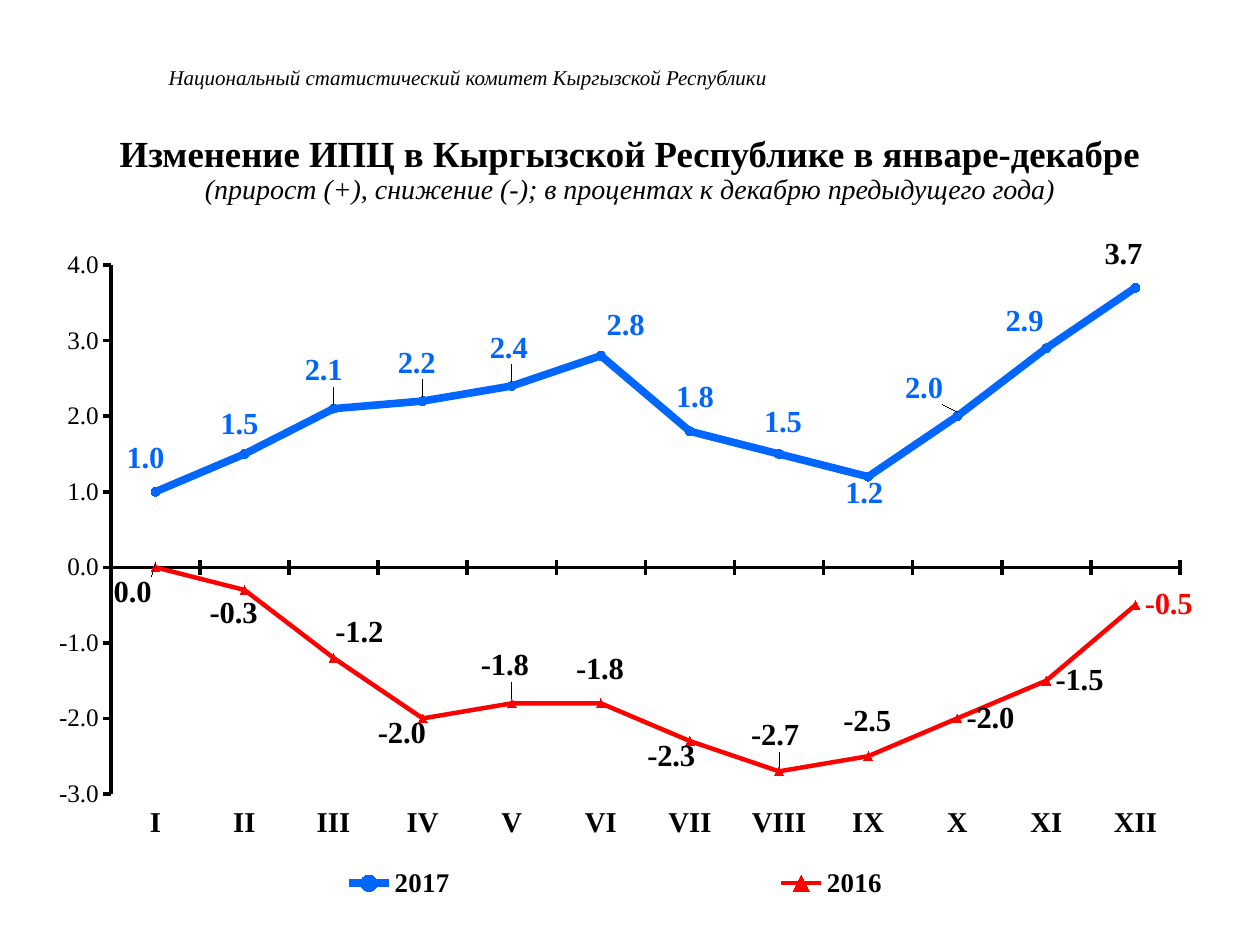
from lxml import etree
from pptx import Presentation
from pptx.chart.data import CategoryChartData
from pptx.dml.color import RGBColor
from pptx.enum.chart import (XL_CHART_TYPE, XL_LABEL_POSITION, XL_LEGEND_POSITION,
                             XL_MARKER_STYLE, XL_TICK_LABEL_POSITION, XL_TICK_MARK)
from pptx.enum.text import MSO_ANCHOR, MSO_AUTO_SIZE, PP_ALIGN
from pptx.oxml.ns import qn
from pptx.util import Cm, Pt

FONT = "Times New Roman"
COLORS = {"text": "000000", "2017": "0066FF", "2016": "FF0000"}
MONTHS = ["I", "II", "III", "IV", "V", "VI", "VII", "VIII", "IX", "X", "XI", "XII"]
NUMBER_FORMAT = "0.0"

# Label shifts are centimetres right and down from the place above the point;
# None puts the label to the right of its point.
SERIES = [
    {"name": "2017", "width": 4.37, "marker": XL_MARKER_STYLE.CIRCLE,
     "values": [1, 1.5, 2.1, 2.2, 2.4, 2.8, 1.8, 1.5, 1.2, 2, 2.9, 3.7],
     "label": "2017", "last_label": "text",
     "shifts": [(-0.2, -0.14), (-0.1, -0.08), (-0.2, -0.24), (-0.12, -0.24),
                (-0.06, -0.24), (0.5, -0.08), (0.1, -0.16), (0.08, -0.12),
                (-0.08, 0.87), (-0.67, -0.04), (-0.44, -0.02), (-0.24, -0.14)]},
    {"name": "2016", "width": 2.56, "marker": XL_MARKER_STYLE.TRIANGLE,
     "values": [0, -0.3, -1.2, -2, -1.8, -1.8, -2.3, -2.7, -2.5, -2, -1.5, -0.5],
     "label": "text", "last_label": "2016",
     "shifts": [(-0.46, 1.03), (-0.22, 0.99), (0.52, 0), (-0.42, 0.83),
                (-0.14, -0.24), (-0.02, -0.16), (-0.38, 0.83), (-0.08, -0.2),
                (-0.02, -0.18), None, None, None]},
]


def color(name):
    return RGBColor.from_string(COLORS[name])


def set_font(font, size, name="text", bold=False, italic=False):
    font.name = FONT
    font.size = Pt(size)
    font.bold = bold
    font.italic = italic
    font.color.rgb = color(name)


def place(shape, box):
    shape.left, shape.top, shape.width, shape.height = [Cm(length) for length in box]


def make_layout(**settings):
    """Return a manual chart layout; settings keep the schema's order."""
    layout = etree.Element(qn("c:layout"))
    manual = etree.SubElement(layout, qn("c:manualLayout"))
    for tag, value in settings.items():
        etree.SubElement(manual, qn("c:" + tag)).set("val", str(value))
    return layout


def add_source(slide, box):
    shape = slide.shapes.add_textbox(*[Cm(length) for length in box])
    text_frame = shape.text_frame
    text_frame.word_wrap = True
    text_frame.vertical_anchor = MSO_ANCHOR.MIDDLE
    text_frame.text = "Национальный статистический комитет Кыргызской Республики"
    paragraph = text_frame.paragraphs[0]
    paragraph.line_spacing = 0.9
    set_font(paragraph.runs[0].font, 12, italic=True)


def add_title(slide, box):
    title = slide.shapes.title
    place(title, box)
    text_frame = title.text_frame
    text_frame.auto_size = MSO_AUTO_SIZE.NONE
    text_frame.vertical_anchor = MSO_ANCHOR.BOTTOM
    text_frame.text = ("Изменение ИПЦ в Кыргызской Республике в январе-декабре\v"
                       "(прирост (+), снижение (-); в процентах к декабрю предыдущего года)")
    paragraph = text_frame.paragraphs[0]
    paragraph.alignment = PP_ALIGN.CENTER
    paragraph.line_spacing = 0.9
    heading, note = paragraph.runs
    set_font(heading.font, 21, bold=True)
    set_font(note.font, 16, italic=True)


def format_axis(axis, size, bold, tick_mark):
    axis.has_major_gridlines = False
    axis.major_tick_mark = tick_mark
    axis.minor_tick_mark = XL_TICK_MARK.NONE
    axis.format.line.color.rgb = color("text")
    axis.format.line.width = Pt(2.05)
    set_font(axis.tick_labels.font, size, bold=bold)


def add_labels(series, settings, chart_width, chart_height):
    labels = series.data_labels
    labels.show_value = True
    labels.number_format = NUMBER_FORMAT
    labels.number_format_is_linked = False
    labels.position = XL_LABEL_POSITION.RIGHT
    set_font(labels.font, 17.5, settings["label"], bold=True)

    last = len(MONTHS) - 1
    for index, shift in enumerate(settings["shifts"]):
        if shift is None and index != last:
            continue
        label = series.points[index].data_label
        name = settings["last_label" if index == last else "label"]
        set_font(label.font, 17.5, name, bold=True)
        label.position = XL_LABEL_POSITION.ABOVE if shift else XL_LABEL_POSITION.RIGHT

    # Number format and place of the single labels
    for element in labels._element.findall(qn("c:dLbl")):
        index_element = element.find(qn("c:idx"))
        number_format = etree.Element(qn("c:numFmt"), formatCode=NUMBER_FORMAT,
                                      sourceLinked="0")
        index_element.addnext(number_format)
        shift = settings["shifts"][int(index_element.get("val"))]
        if shift:
            right, down = shift
            index_element.addnext(make_layout(x=round(right / chart_width, 4),
                                              y=round(down / chart_height, 4)))


def add_price_chart(slide, box):
    data = CategoryChartData(number_format=NUMBER_FORMAT)
    data.categories = MONTHS
    for settings in SERIES:
        data.add_series(settings["name"], settings["values"])
    chart = slide.shapes.add_chart(XL_CHART_TYPE.LINE_MARKERS,
                                   *[Cm(length) for length in box], data).chart
    chart.has_title = False
    set_font(chart.font, 17.5, bold=True)

    # Axes
    format_axis(chart.category_axis, 16.4, True, XL_TICK_MARK.CROSS)
    chart.category_axis.tick_label_position = XL_TICK_LABEL_POSITION.LOW
    value_axis = chart.value_axis
    format_axis(value_axis, 14.4, False, XL_TICK_MARK.OUTSIDE)
    value_axis.minimum_scale, value_axis.maximum_scale = -3, 4
    value_axis.major_unit = 1
    value_axis.tick_labels.number_format = NUMBER_FORMAT
    value_axis.tick_labels.number_format_is_linked = False

    # Lines with markers and labels
    for series, settings in zip(chart.plots[0].series, SERIES):
        series_color = color(settings["name"])
        series.smooth = False
        series.format.line.color.rgb = series_color
        series.format.line.width = Pt(settings["width"])
        series.marker.style = settings["marker"]
        series.marker.size = 5
        series.marker.format.fill.solid()
        series.marker.format.fill.fore_color.rgb = series_color
        series.marker.format.line.color.rgb = series_color
        add_labels(series, settings, box[2], box[3])

    # Legend
    chart.has_legend = True
    legend = chart.legend
    legend.position = XL_LEGEND_POSITION.BOTTOM
    legend.include_in_layout = False
    set_font(legend.font, 15.4, bold=True)

    # Plot area and legend places
    plot_area = chart._chartSpace.find(".//" + qn("c:plotArea"))
    for parent in (plot_area, legend._element):
        for old_layout in parent.findall(qn("c:layout")):
            parent.remove(old_layout)
    plot_area.insert(0, make_layout(layoutTarget="inner", xMode="edge", yMode="edge",
                                    x=0.074, y=0.053, w=0.898, h=0.759))
    legend._element.find(qn("c:legendPos")).addnext(
        make_layout(xMode="edge", yMode="edge", x=0.003, y=0.9, w=0.99, h=0.08))


def main():
    presentation = Presentation()
    presentation.slide_width = Cm(25.4)
    presentation.slide_height = Cm(19.05)
    slide = presentation.slides.add_slide(presentation.slide_layouts[5])
    add_source(slide, (3.15, 0.91, 13.34, 1.35))
    add_title(slide, (1.27, 2.26, 22.86, 2.01))
    add_price_chart(slide, (0.46, 4.6, 24, 14.05))
    presentation.save("out.pptx")


if __name__ == "__main__":
    main()
